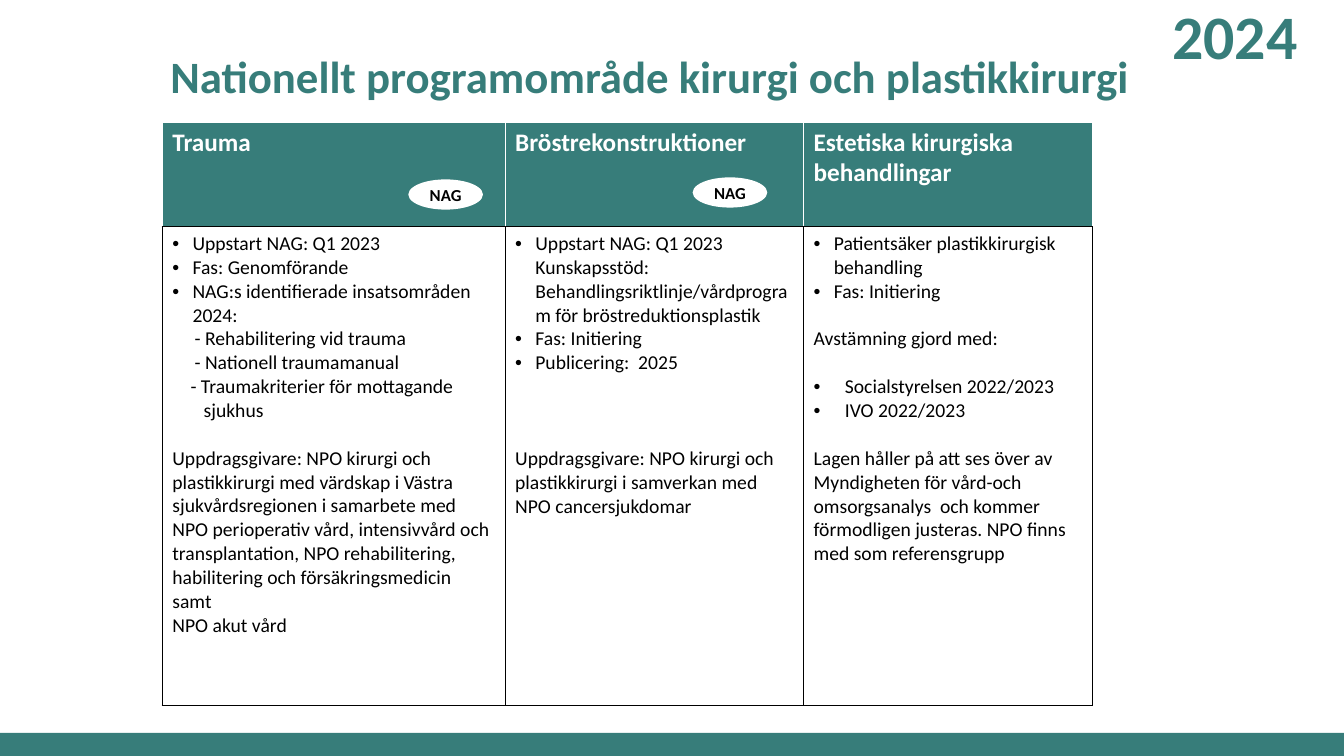
from lxml import etree
from pptx import Presentation
from pptx import util as u
from pptx.dml import color
from pptx.enum import shapes, text
from pptx.oxml import ns

TEAL, WHITE, BLACK = "377D7A", "FFFFFF", "000000"
WIDTH, HEIGHT = 13.33, 7.5
LINE = 17.1  # height of one body line in points
COLUMNS, ROWS = [3.4, 2.96, 2.87], [1.04, 4.75]

# Paragraph styles: left indent, first-line indent (inches), bullet
STYLES = {
    "plain": (0, 0, False),
    "bullet": (0.2, -0.2, True),
    "wide": (0.31, -0.31, True),
    "dash": (0.22, 0, False),
    "hanging": (0.31, -0.13, False),
}
HEADINGS = ["Trauma", "Bröstrekonstruktioner", "Estetiska kirurgiska behandlingar"]
# Each entry: style, lines of space before, wording
BODIES = [
    [("bullet", 0, "Uppstart NAG: Q1 2023"),
     ("bullet", 0, "Fas: Genomförande"),
     ("bullet", 0, "NAG:s identifierade insatsområden 2024:"),
     ("dash", 0, "- Rehabilitering vid trauma"),
     ("dash", 0, "- Nationell traumamanual"),
     ("hanging", 0, "- Traumakriterier för mottagande sjukhus"),
     ("plain", 1, "Uppdragsgivare: NPO kirurgi och plastikkirurgi med värdskap i Västra "
      "sjukvårdsregionen i samarbete med NPO perioperativ vård, intensivvård och "
      "transplantation, NPO rehabilitering, habilitering och försäkringsmedicin samt"),
     ("plain", 0, "NPO akut vård")],
    [("bullet", 0, "Uppstart NAG: Q1 2023 Kunskapsstöd: "
      "Behandlingsriktlinje/vårdprogram för bröstreduktionsplastik"),
     ("bullet", 0, "Fas: Initiering"),
     ("bullet", 0, "Publicering:  2025"),
     ("plain", 3, "Uppdragsgivare: NPO kirurgi och plastikkirurgi i samverkan med "
      "NPO cancersjukdomar")],
    [("bullet", 0, "Patientsäker plastikkirurgisk behandling"),
     ("bullet", 0, "Fas: Initiering"),
     ("plain", 1, "Avstämning gjord med:"),
     ("wide", 1, "Socialstyrelsen 2022/2023"),
     ("wide", 0, "IVO 2022/2023"),
     ("plain", 1, "Lagen håller på att ses över av Myndigheten för vård-och omsorgsanalys  "
      "och kommer förmodligen justeras. NPO finns med som referensgrupp")],
]


def rgb(value):
    return color.RGBColor.from_string(value)


def inches(*lengths):
    return [u.Inches(length) for length in lengths]


def write(para, words, size, ink=BLACK, bold=True, **layout):
    span = para.add_run()
    span.text = words
    for name, value in {"name": "Calibri", "size": u.Pt(size), "bold": bold}.items():
        setattr(span.font, name, value)
    span.font.color.rgb = rgb(ink)
    for name, value in layout.items():
        setattr(para, name, value)


def fill(shape, ink):
    shape.shadow.inherit = False
    shape.fill.solid()
    shape.fill.fore_color.rgb = rgb(ink)
    shape.line.fill.background()


def style_paragraph(para, style):
    left, first, bullet = STYLES[style]
    props = para._p.get_or_add_pPr()
    props.set("marL", str(u.Inches(left)))
    props.set("indent", str(u.Inches(first)))
    if bullet:
        etree.SubElement(props, ns.qn("a:buFont"), typeface="Arial")
        etree.SubElement(props, ns.qn("a:buChar"), char="•")


def set_borders(cell, inks):
    props = cell._tc.get_or_add_tcPr()
    for index, (side, ink) in enumerate(inks.items()):
        edge = etree.Element(ns.qn("a:ln" + side), w=str(u.Pt(1)))
        solid = etree.SubElement(edge, ns.qn("a:solidFill"))
        etree.SubElement(solid, ns.qn("a:srgbClr"), val=ink)
        props.insert(index, edge)


def add_headings(page, box):
    left, top, width, height = box
    title = page.shapes.title
    title.left, title.top, title.width, title.height = inches(*box)
    # Year in the corner
    year = page.shapes.add_textbox(*inches(left + width - 0.06, top - 0.33, 1.97, 0.7))
    for shape, words, size in [
            (title, "Nationellt programområde kirurgi och plastikkirurgi", 32),
            (year, "2024", 44.1)]:
        frame = shape.text_frame
        frame.word_wrap = True
        frame.auto_size = text.MSO_AUTO_SIZE.NONE
        frame.vertical_anchor = text.MSO_ANCHOR.BOTTOM
        write(frame.paragraphs[0], words, size, TEAL,
              alignment=text.PP_ALIGN.LEFT, line_spacing=0.9)


def add_areas(page, left, top):
    table = page.shapes.add_table(2, 3, *inches(left, top, sum(COLUMNS), sum(ROWS))).table
    for row, height in zip(table.rows, ROWS):
        row.height = u.Inches(height)
    for index, (width, heading, body) in enumerate(zip(COLUMNS, HEADINGS, BODIES)):
        table.columns[index].width = u.Inches(width)
        # Header cell
        head = table.cell(0, index)
        head.fill.solid()
        head.fill.fore_color.rgb = rgb(TEAL)
        write(head.text_frame.paragraphs[0], heading, 18, WHITE)
        set_borders(head, {"L": WHITE, "R": WHITE, "T": WHITE, "B": BLACK})
        # Body cell
        cell = table.cell(1, index)
        cell.fill.background()
        set_borders(cell, dict.fromkeys("LRTB", BLACK))
        frame = cell.text_frame
        for number, (style, gap, words) in enumerate(body):
            para = frame.add_paragraph() if number else frame.paragraphs[0]
            style_paragraph(para, style)
            write(para, words, 14, bold=False, space_before=u.Pt(gap * LINE))
    # Working-group badges in the first two header cells
    for x, y in [(2.44, 0.57), (5.26, 0.55)]:
        badge = page.shapes.add_shape(shapes.MSO_SHAPE.OVAL,
                                      *inches(left + x, top + y, 0.74, 0.3))
        fill(badge, WHITE)
        frame = badge.text_frame
        frame.word_wrap = False
        frame.vertical_anchor = text.MSO_ANCHOR.MIDDLE
        write(frame.paragraphs[0], "NAG", 12, alignment=text.PP_ALIGN.CENTER)


def add_band(page, height):
    # Band along the bottom edge
    band = page.shapes.add_shape(shapes.MSO_SHAPE.RECTANGLE,
                                 *inches(0, HEIGHT - height, WIDTH, height))
    fill(band, TEAL)


def main():
    deck = Presentation()
    deck.slide_width, deck.slide_height = inches(WIDTH, HEIGHT)
    page = deck.slides.add_slide(deck.slide_layouts[5])
    add_band(page, 0.23)
    add_headings(page, (1.59, 0.4, 10, 0.67))
    add_areas(page, 1.61, 1.21)
    deck.save("out.pptx")


if __name__ == "__main__":
    main()
